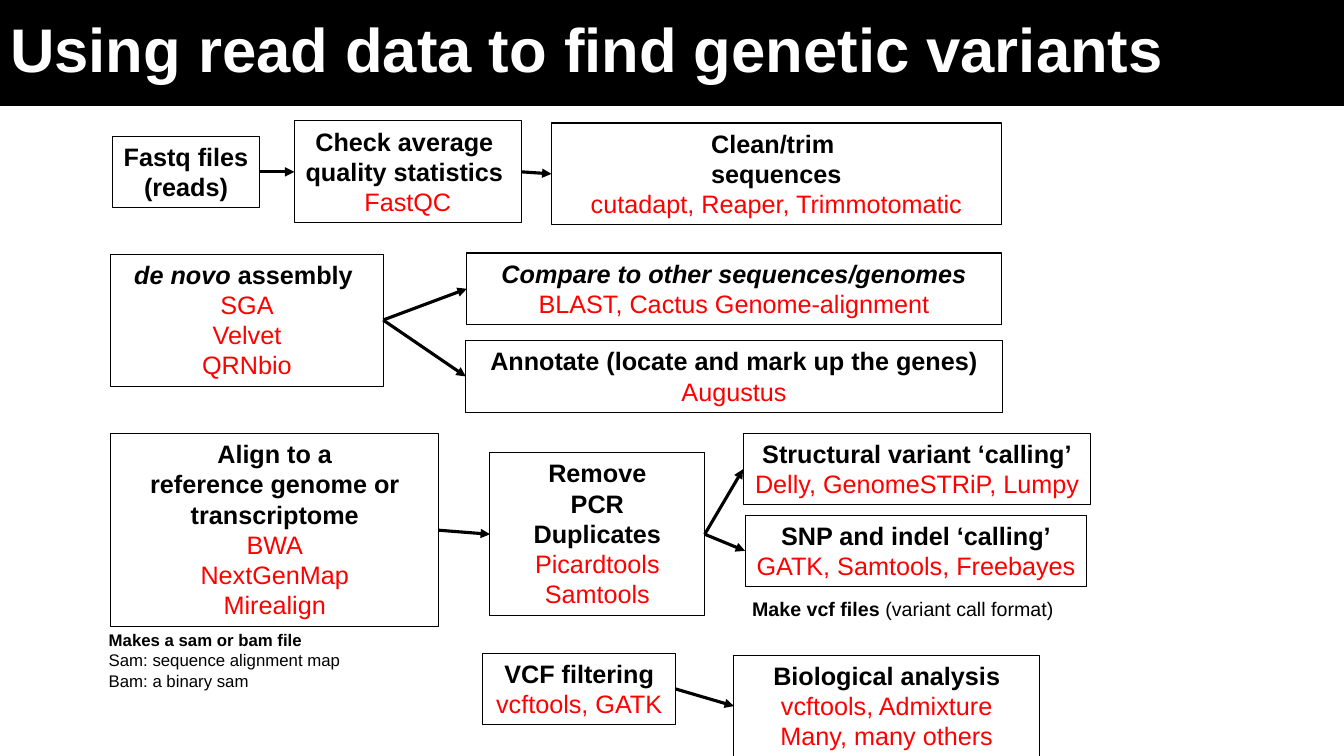
import pptx
import pptx.util
import pptx.dml.color
import pptx.enum.shapes
import pptx.enum.text
from lxml import etree

Inches = pptx.util.Inches
Pt = pptx.util.Pt
RGBColor = pptx.dml.color.RGBColor
Align = pptx.enum.text.PP_ALIGN
Fit = pptx.enum.text.MSO_AUTO_SIZE

BLACK = RGBColor(0x00, 0x00, 0x00)
WHITE = RGBColor(0xFF, 0xFF, 0xFF)
RED = RGBColor(0xFF, 0x00, 0x00)
DRAW = "{http://schemas.openxmlformats.org/drawingml/2006/main}"
RIGHT, LEFT = 3, 1


class Chart:
    """Flow chart style and the slide it is drawn on."""
    face = "Arial"
    size = 18

    def __init__(self, slide):
        self.slide = slide

    def font(self, para, size, color, bold):
        para.font.name = self.face
        para.font.size = Pt(size)
        para.font.color.rgb = color
        para.font.bold = bold

    def fill(self, frame, lines, size, align):
        """Fill the frame with (text, color, bold) lines."""
        for i, (text, color, bold) in enumerate(lines):
            para = frame.add_paragraph() if i else frame.paragraphs[0]
            para.add_run().text = text
            para.alignment = align
            self.font(para, size, color, bold)

    def title(self, text, width, height):
        shape = self.slide.shapes.title
        shape.left = shape.top = 0
        shape.width, shape.height = Inches(width), Inches(height)
        shape.fill.solid()
        shape.fill.fore_color.rgb = BLACK
        frame = shape.text_frame
        frame.text = text
        frame.auto_size = Fit.NONE
        frame.vertical_anchor = pptx.enum.text.MSO_ANCHOR.MIDDLE
        para = frame.paragraphs[0]
        para.alignment = Align.LEFT
        para.line_spacing = 0.9
        self.font(para, 44, WHITE, True)

    def step(self, place, heads, tools=(), wrap=True):
        """Add an outlined box: bold step name, then its tools in red."""
        shape = self.slide.shapes.add_shape(
            pptx.enum.shapes.MSO_SHAPE.RECTANGLE, *map(Inches, place))
        shape.shadow.inherit = False
        shape.fill.background()
        shape.line.color.rgb = BLACK
        shape.line.width = Pt(0.75)
        frame = shape.text_frame
        frame.word_wrap = wrap
        frame.auto_size = Fit.SHAPE_TO_FIT_TEXT
        frame.vertical_anchor = pptx.enum.text.MSO_ANCHOR.TOP
        lines = [(t, BLACK, True) for t in heads] + [(t, RED, False) for t in tools]
        self.fill(frame, lines, self.size, Align.CENTER)
        return shape

    def note(self, place, lines, size, align):
        """Add plain text whose first run is bold; return its first paragraph."""
        frame = self.slide.shapes.add_textbox(*map(Inches, place)).text_frame
        frame.word_wrap = True
        frame.auto_size = Fit.SHAPE_TO_FIT_TEXT
        self.fill(frame, [(t, BLACK, False) for t in lines], size, align)
        first = frame.paragraphs[0]
        first.runs[0].font.bold = True
        return first

    def link(self, start, end):
        """Draw an arrow from the right side of start to the left of end."""
        arrow = self.slide.shapes.add_connector(
            pptx.enum.shapes.MSO_CONNECTOR.STRAIGHT, 0, 0, 0, 0)
        arrow.begin_connect(start, RIGHT)
        arrow.end_connect(end, LEFT)
        arrow.line.color.rgb = BLACK
        arrow.line.width = Pt(2.25)
        props = arrow.element.spPr
        etree.SubElement(props.find(DRAW + "ln"), DRAW + "tailEnd", type="triangle")
        etree.SubElement(props, DRAW + "effectLst")


def main():
    deck = pptx.Presentation()
    deck.slide_width, deck.slide_height = Inches(13.33), Inches(7.5)
    chart = Chart(deck.slides.add_slide(deck.slide_layouts[5]))
    chart.title("Using read data to find genetic variants", 13.33, 1.05)

    reads = chart.step((1.12, 1.35, 1.45, 0.71), ["Fastq files", "(reads)"], wrap=False)
    check = chart.step((2.92, 1.2, 2.25, 1.01),
                       ["Check average ", "quality statistics "], ["FastQC"], wrap=False)
    clean = chart.step((5.47, 1.22, 4.46, 1.01), ["Clean/trim ", "sequences"],
                       ["cutadapt, Reaper, Trimmotomatic"])

    build = chart.step((1.1, 2.52, 2.7, 1.31), ["de novo "], ["SGA", "Velvet", "QRNbio"])
    name = build.text_frame.paragraphs[0]
    name.runs[0].font.italic = True
    name.add_run().text = "assembly "
    match = chart.step((4.63, 2.51, 5.3, 0.71), ["Compare to other sequences/genomes"],
                       ["BLAST, Cactus Genome-alignment"])
    match.text_frame.paragraphs[0].font.italic = True
    mark = chart.step((4.62, 3.38, 5.32, 0.71),
                      ["Annotate (locate and mark up the genes)"], ["Augustus"])

    align = chart.step((1.1, 4.3, 3.25, 1.92),
                       ["Align to a", "reference genome or", "transcriptome"],
                       ["BWA", "NextGenMap", "Mirealign"])
    dedup = chart.step((4.86, 4.49, 2.13, 1.62), ["Remove", "PCR", "Duplicates"],
                       ["Picardtools", "Samtools"])
    large = chart.step((7.37, 4.3, 3.45, 0.71), ["Structural variant ‘calling’"],
                       ["Delly, GenomeSTRiP, Lumpy"], wrap=False)
    small = chart.step((7.39, 5.11, 3.39, 0.71), ["SNP and indel ‘calling’"],
                       ["GATK, Samtools, Freebayes"], wrap=False)
    chart.note((0.98, 6.2, 3.25, 0.71),
               ["Makes a sam or bam file", "Sam: sequence alignment map",
                "Bam: a binary sam"], 12, Align.LEFT)
    calls = chart.note((7.28, 5.87, 3.35, 0.34), ["Make vcf files"], 14, Align.CENTER)
    calls.add_run().text = " (variant call format)"

    sift = chart.step((4.79, 6.48, 1.91, 0.71), ["VCF filtering"],
                      ["vcftools, GATK"], wrap=False)
    study = chart.step((7.28, 6.5, 3.03, 1.01), ["Biological analysis"],
                       ["vcftools, Admixture", "Many, many others"])

    for start, end in [(reads, check), (check, clean), (build, match), (build, mark),
                       (align, dedup), (dedup, large), (dedup, small), (sift, study)]:
        chart.link(start, end)
    deck.save("out.pptx")


if __name__ == "__main__":
    main()
